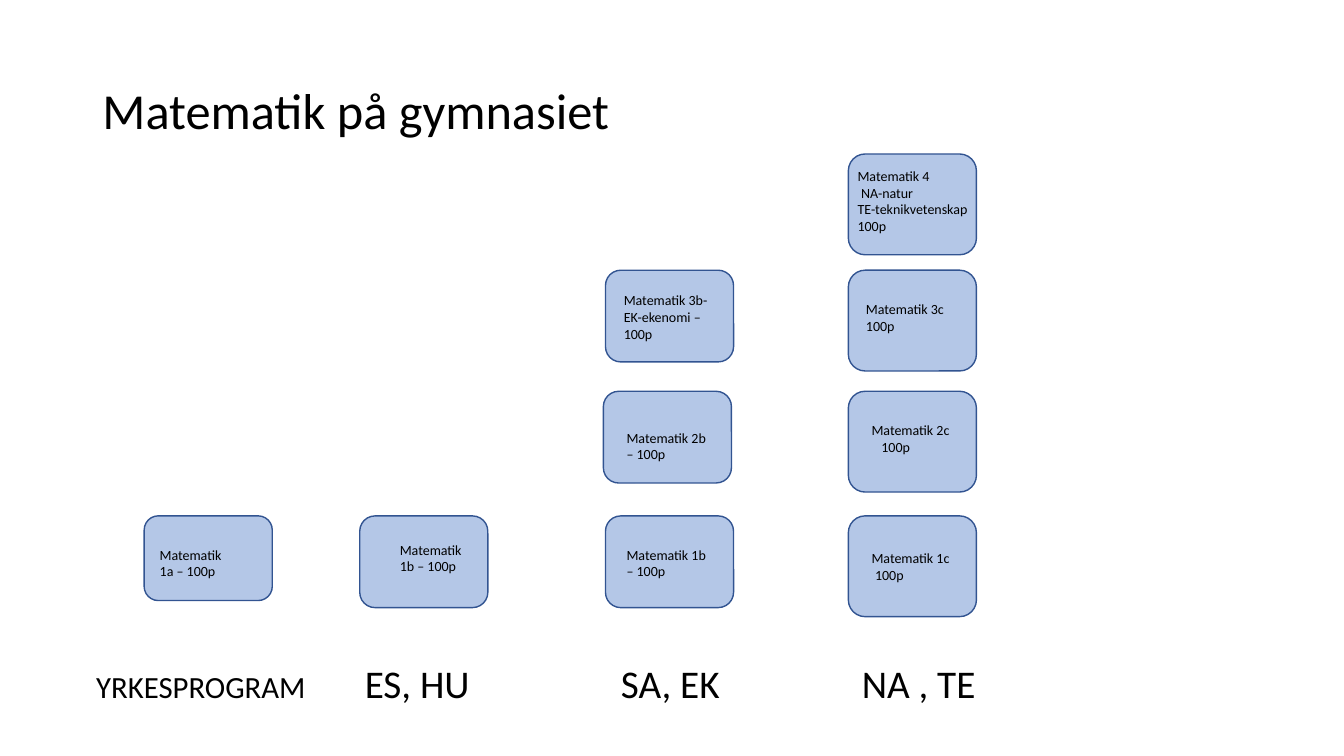
import pptx
import pptx.util
import pptx.dml.color
import pptx.enum.shapes
import pptx.enum.text
import lxml.etree

Pt = pptx.util.Pt
COLOURS = {"fill": "B4C7E7", "outline": "325491", "text": "000000"}
COLUMNS = {"yrkes": 103, "es_hu": 257, "sa_ek": 432.5, "na_te": 606}
ROWS = {1: 368.5, 2: 279.5, 3: 193, 4: 110}
COURSE_WIDTH = 91.5


def colour(name):
    return pptx.dml.color.RGBColor.from_string(COLOURS[name])


def write(para, text, size):
    span = para.add_run()
    span.text = text
    for name, value in {"name": "Calibri", "size": Pt(size)}.items():
        setattr(span.font, name, value)
    span.font.color.rgb = colour("text")


deck = pptx.Presentation()
deck.slide_width, deck.slide_height = Pt(960), Pt(540)
page = deck.slides.add_slide(deck.slide_layouts[1])
title, first_programme = page.placeholders

headings = [
    (title, "Matematik på gymnasiet", 36, (66, 29, 828, 104)),
    (first_programme, "YRKESPROGRAM", 22, (61.5, 467, 180, 40)),
    (None, "ES, HU", 28, (253.5, 468.5, 130, 40)),
    (None, "SA, EK", 28, (436.5, 468.5, 130, 40)),
    (None, "NA , TE", 28, (608.5, 468.5, 130, 40)),
]
anchors = pptx.enum.text.MSO_ANCHOR
for holder, text, size, place in headings:
    box = holder or page.shapes.add_textbox(0, 0, 0, 0)
    for name, value in zip(("left", "top", "width", "height"), place):
        setattr(box, name, Pt(value))
    frame_format = {
        "word_wrap": True,
        "auto_size": pptx.enum.text.MSO_AUTO_SIZE.NONE,
        "vertical_anchor": anchors.MIDDLE if holder is title else anchors.BOTTOM,
    }
    for name, value in frame_format.items():
        setattr(box.text_frame, name, value)
    para = box.text_frame.paragraphs[0]
    para.alignment = pptx.enum.text.PP_ALIGN.LEFT
    para.line_spacing = 0.9
    write(para, text, size)

settings = first_programme.text_frame.paragraphs[0]._p.get_or_add_pPr()
settings.set("marL", "0")
settings.set("indent", "0")
lxml.etree.SubElement(settings, "{http://schemas.openxmlformats.org/drawingml/2006/main}buNone")

courses = [
    ("yrkes", 1, 0, 60.5, (107, 386.5, 91.5), [("Matematik", 0), ("1a – 100p", 0)]),
    ("es_hu", 1, 0, 65.5, (278.5, 383, 70.5), [("Matematik 1b – 100p", 0)]),
    ("sa_ek", 1, 0, 65.5, (440.5, 386.5, 71.5), [("Matematik 1b – 100p", 0)]),
    ("sa_ek", 2, -1.5, 65.5, (440.5, 303, 71.5), [("Matematik 2b – 100p", 0)]),
    ("sa_ek", 3, 0, 65.5, (438.5, 205, 83.5), [("Matematik 3b-", 0), ("EK-ekenomi – 100p", 0)]),
    ("na_te", 1, 0, 72, (615.5, 389, 71.5), [("Matematik 1c", 0), ("100p", 2.5)]),
    ("na_te", 2, 0, 72, (615.5, 297.5, 71.5), [("Matematik 2c", 0), ("100p", 7)]),
    ("na_te", 3, 0, 72, (611.5, 211, 75.5), [("Matematik 3c", 0), ("100p", 0)]),
    ("na_te", 4, 0, 72, (605.5, 116, 96.5),
     [("Matematik 4", 0), ("NA-natur", 2.5), ("TE-teknikvetenskap", 0), ("100p", 0)]),
]

for column, row, shift, height, (left, top, width), lines in courses:
    course = page.shapes.add_shape(
        pptx.enum.shapes.MSO_SHAPE.ROUNDED_RECTANGLE,
        Pt(COLUMNS[column] + shift), Pt(ROWS[row]), Pt(COURSE_WIDTH), Pt(height),
    )
    course.shadow.inherit = False
    course.fill.solid()
    course.fill.fore_color.rgb = colour("fill")
    course.line.color.rgb = colour("outline")
    course.line.width = Pt(1)

    line_count = 3 if row == 3 and column == "sa_ek" else max(2, len(lines))
    label = page.shapes.add_textbox(Pt(left), Pt(top), Pt(width), Pt(7.5 + 12 * line_count))
    frame = label.text_frame
    frame.word_wrap = True
    frame.auto_size = pptx.enum.text.MSO_AUTO_SIZE.SHAPE_TO_FIT_TEXT
    for index, (text, indent) in enumerate(lines):
        para = frame.add_paragraph() if index else frame.paragraphs[0]
        write(para, text, 10)
        if indent:
            para._p.get_or_add_pPr().set("marL", str(Pt(indent)))

deck.save("out.pptx")
